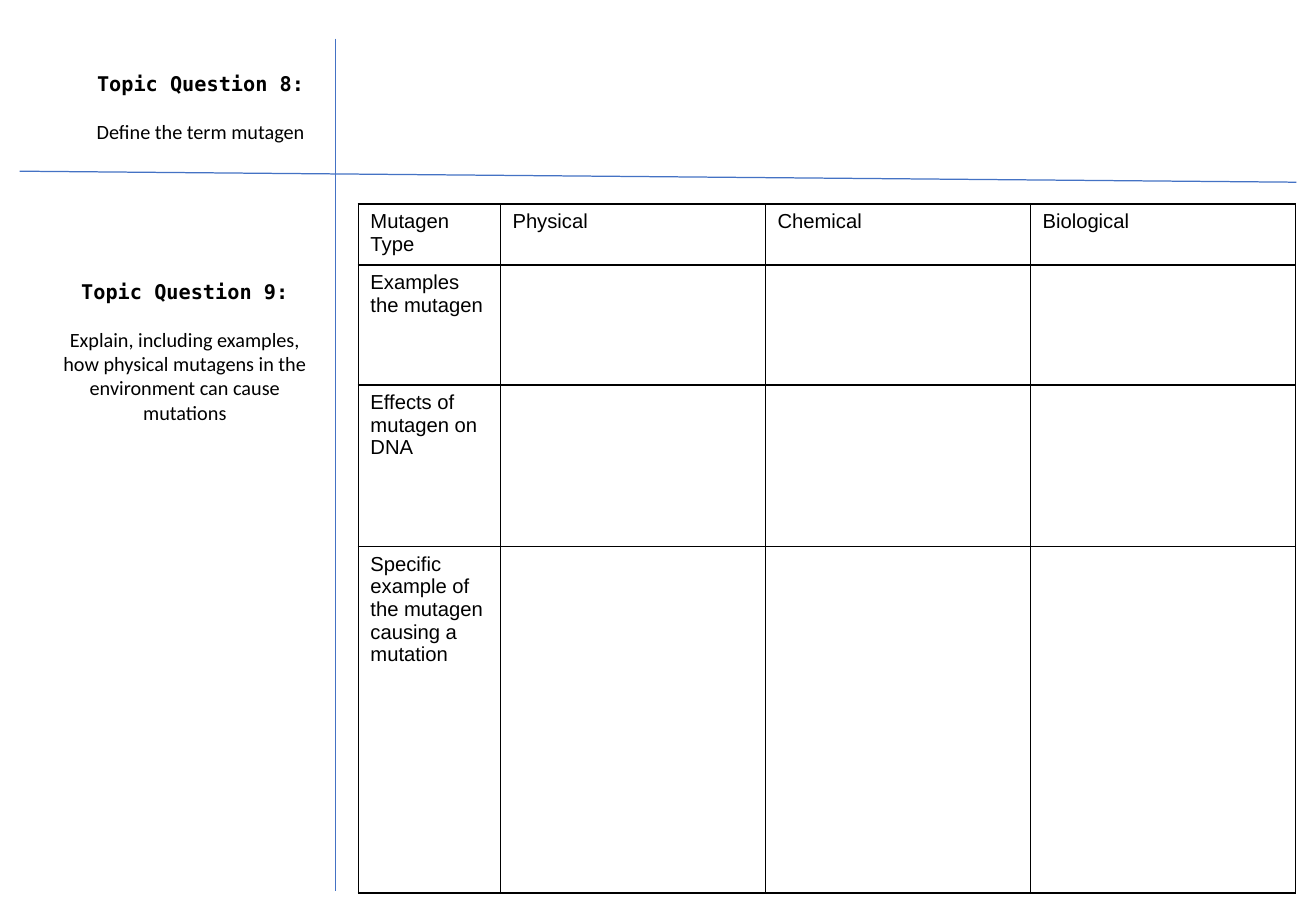
from lxml import etree
from pptx import Presentation
from pptx.dml.color import RGBColor
from pptx.enum.shapes import MSO_CONNECTOR
from pptx.enum.text import MSO_ANCHOR, PP_ALIGN
from pptx.oxml.ns import qn
from pptx.util import Cm, Pt

STRAIGHT = MSO_CONNECTOR.STRAIGHT
MIDDLE = MSO_ANCHOR.MIDDLE
CENTER = PP_ALIGN.CENTER

COLORS = {"text": "000000", "border": "000000", "divider": "4472C4", "background": "FFFFFF"}
HEADING_FONT = "DejaVu Sans Mono"
QUESTION_FONT = "Calibri"
TABLE_FONT = "Arial"
TEXT_SIZE = 12

QUESTIONS = [
    (1.45, 1.78, "Topic Question 8:", "Define the term mutagen"),
    (1.12, 6.88, "Topic Question 9:",
     "Explain, including examples, how physical mutagens in the environment can cause mutations"),
]
DIVIDERS = [(7.01, 0.81, 7.01, 18.64), (0.41, 3.58, 27.1, 3.81)]
COLUMN_WIDTHS = [2.97, 5.54, 5.54, 5.54]
ROW_HEIGHTS = [1.27, 2.51, 3.38, 7.24]
MUTAGEN_ROWS = [
    ["Mutagen Type", "Physical", "Chemical", "Biological"],
    ["Examples the mutagen", "", "", ""],
    ["Effects of mutagen on DNA", "", "", ""],
    ["Specific example of the mutagen causing a mutation", "", "", ""],
]


def color(name):
    return RGBColor.from_string(COLORS[name])


def add_run(paragraph, text, font_name, bold=False):
    run = paragraph.add_run()
    run.text = text
    run.font.name = font_name
    run.font.size = Pt(TEXT_SIZE)
    run.font.bold = bold
    run.font.color.rgb = color("text")


def add_question(slide, left, top, heading, question):
    shape = slide.shapes.add_textbox(Cm(left), Cm(top), Cm(5.49), Cm(1.91))
    frame = shape.text_frame
    frame.word_wrap = True
    frame.vertical_anchor = MIDDLE
    frame.margin_left = frame.margin_top = frame.margin_right = 0
    frame.margin_bottom = Cm(0.96)
    heading_paragraph = frame.paragraphs[0]
    heading_paragraph.alignment = CENTER
    heading_paragraph.space_after = Pt(14)
    add_run(heading_paragraph, heading, HEADING_FONT, bold=True)
    question_paragraph = frame.add_paragraph()
    question_paragraph.alignment = CENTER
    add_run(question_paragraph, question, QUESTION_FONT)


def add_divider(slide, start_x, start_y, end_x, end_y):
    connector = slide.shapes.add_connector(
        STRAIGHT, Cm(start_x), Cm(start_y), Cm(end_x), Cm(end_y))
    connector.line.color.rgb = color("divider")
    connector.line.width = Pt(0.75)
    etree.SubElement(connector._element.spPr, qn("a:effectLst"))


def set_borders(cell):
    properties = cell._tc.get_or_add_tcPr()
    for side in ("a:lnL", "a:lnR", "a:lnT", "a:lnB"):
        line = etree.SubElement(properties, qn(side), w=str(Pt(1)))
        fill = etree.SubElement(line, qn("a:solidFill"))
        etree.SubElement(fill, qn("a:srgbClr"), val=COLORS["border"])


def add_mutagen_table(slide, left, top):
    table = slide.shapes.add_table(
        len(ROW_HEIGHTS), len(COLUMN_WIDTHS), Cm(left), Cm(top),
        Cm(sum(COLUMN_WIDTHS)), Cm(sum(ROW_HEIGHTS))).table
    table.first_row = False
    table.horz_banding = False
    for column, width in zip(table.columns, COLUMN_WIDTHS):
        column.width = Cm(width)
    for row, height, texts in zip(table.rows, ROW_HEIGHTS, MUTAGEN_ROWS):
        row.height = Cm(height)
        for cell, text in zip(row.cells, texts):
            set_borders(cell)
            cell.fill.background()
            if text:
                add_run(cell.text_frame.paragraphs[0], text, TABLE_FONT)


def main():
    presentation = Presentation()
    presentation.slide_width = Cm(27.51)
    presentation.slide_height = Cm(19.05)
    slide = presentation.slides.add_slide(presentation.slide_layouts[6])
    slide.background.fill.solid()
    slide.background.fill.fore_color.rgb = color("background")
    for divider in DIVIDERS:
        add_divider(slide, *divider)
    for question in QUESTIONS:
        add_question(slide, *question)
    add_mutagen_table(slide, 7.49, 4.27)
    presentation.save("out.pptx")


if __name__ == "__main__":
    main()
